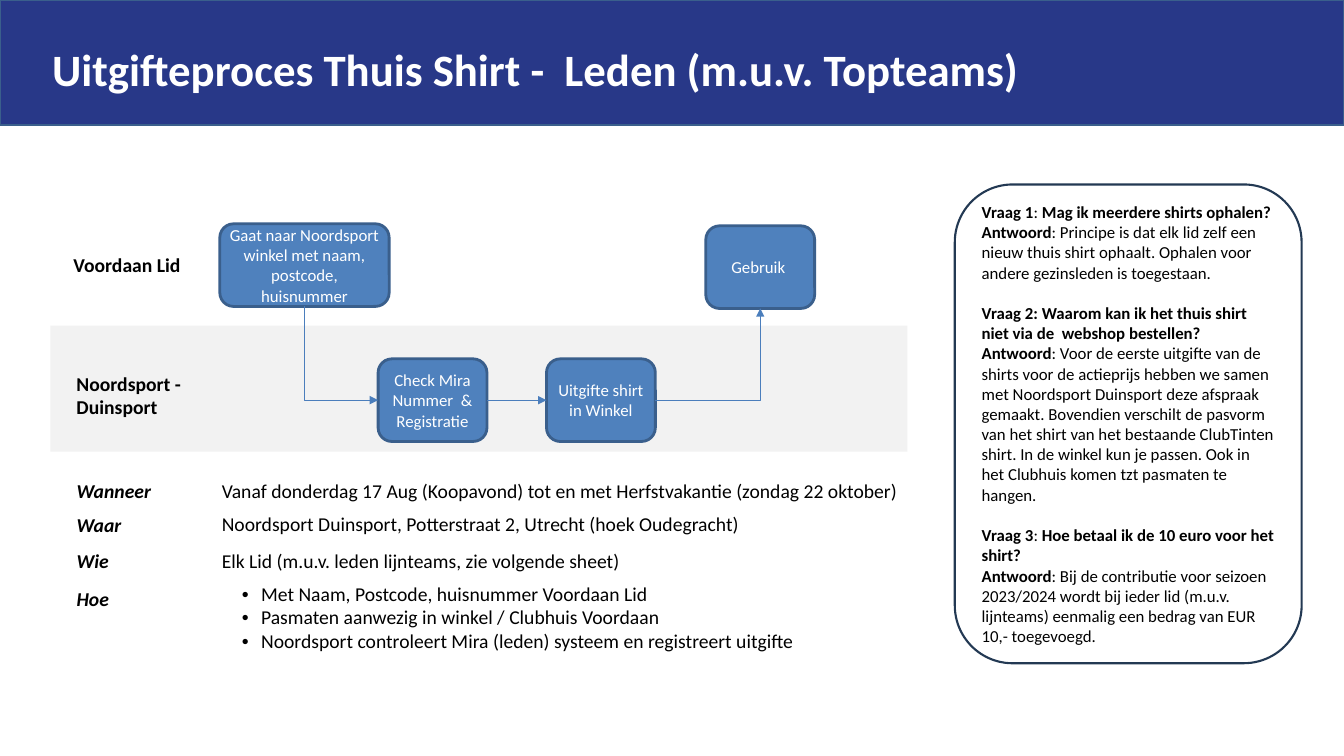
from dataclasses import dataclass

from lxml.etree import SubElement
from pptx import Presentation
from pptx.dml.color import RGBColor
from pptx.enum.shapes import MSO_CONNECTOR, MSO_SHAPE
from pptx.enum.text import MSO_ANCHOR, PP_ALIGN
from pptx.oxml.ns import qn
from pptx.util import Emu, Pt

EMU_PER_PX = 9144
FONT = "Calibri"
WHITE, BLACK = "FFFFFF", "000000"
NAVY, BAND_GREY = "283888", "F2F2F2"
STEP_BLUE, STEP_EDGE, ARROW_BLUE = "4F81BD", "3A5F8C", "4B7EBC"
PANEL_EDGE = "233953"
STEP_HEIGHT = 82
LOWER_ROW_TOP = 356


@dataclass(frozen=True)
class Box:
    left: int
    top: int
    width: int
    height: int

    def emu(self) -> tuple:
        return px(self.left), px(self.top), px(self.width), px(self.height)


@dataclass(frozen=True)
class Step:
    name: str
    text: str
    left: int
    top: int
    width: int = 108


@dataclass(frozen=True)
class Arrow:
    start: str
    start_side: int
    end: str
    end_side: int
    preset: str


STEPS = [
    Step("ophalen", "Gaat naar Noordsport winkel met naam, postcode, huisnummer",
         218, 222, 168),
    Step("check", "Check Mira Nummer  & Registratie", 375, LOWER_ROW_TOP),
    Step("gebruik", "Gebruik ", 700, 224),
    Step("uitgifte", "Uitgifte shirt in Winkel", 542, LOWER_ROW_TOP),
]
ARROWS = [
    Arrow("ophalen", 2, "check", 1, "bentConnector2"),
    Arrow("check", 3, "uitgifte", 1, "bentConnector3"),
    Arrow("uitgifte", 3, "gebruik", 2, "bentConnector2"),
]
LABELS = [
    ("Voordaan Lid", Box(63, 246, 130, 34)),
    ("Noordsport - Duinsport", Box(66, 364, 152, 57)),
]
# Each paragraph alternates between bold and regular runs.
QUESTIONS = [
    (["Vraag 1", ": ", "Mag ik meerdere shirts ophalen?"],
     ["Antwoord", ": Principe is dat elk lid zelf een nieuw thuis shirt ophaalt. "
      "Ophalen voor andere gezinsleden is toegestaan."]),
    (["Vraag 2: Waarom kan ik het thuis shirt niet via de  webshop bestellen?"],
     ["Antwoord", ": Voor de eerste uitgifte van de shirts voor de actieprijs hebben "
      "we samen met Noordsport Duinsport deze afspraak gemaakt. Bovendien verschilt "
      "de pasvorm van het shirt van het bestaande ClubTinten shirt. In de winkel kun "
      "je passen. Ook in het Clubhuis komen tzt pasmaten te hangen."]),
    (["Vraag 3", ": ", "Hoe betaal ik de 10 euro voor het shirt?"],
     ["Antwoord", ": Bij de contributie voor seizoen 2023/2024 wordt bij ieder lid "
      "(m.u.v. lijnteams) eenmalig een bedrag van EUR 10,- toegevoegd."]),
]
COLUMN_WIDTHS = [150, 524, 202]
ROW_HEIGHTS = [26, 26, 26, 78]
DETAILS = [
    ("Wanneer", ["Vanaf donderdag 17 Aug (Koopavond) tot en met Herfstvakantie "
                 "(zondag 22 oktober)"]),
    ("Waar", ["Noordsport Duinsport, Potterstraat 2, Utrecht (hoek Oudegracht)"]),
    ("Wie", ["Elk Lid (m.u.v. leden lijnteams, zie volgende sheet)"]),
    ("Hoe", ["Met Naam, Postcode, huisnummer Voordaan Lid",
             "Pasmaten aanwezig in winkel / Clubhuis Voordaan",
             "Noordsport controleert Mira (leden) systeem en registreert uitgifte"]),
]


def px(length: int) -> Emu:
    return Emu(length * EMU_PER_PX)


def color(value: str) -> RGBColor:
    return RGBColor.from_string(value)


def style_font(paragraph, size: int, font_color: str = BLACK, bold=None, italic=None) -> None:
    font = paragraph.font
    font.name, font.size, font.bold, font.italic = FONT, Pt(size), bold, italic
    font.color.rgb = color(font_color)


def add_box(slide, kind, box: Box, fill=None, edge=None, edge_width: float = 2):
    shape = slide.shapes.add_shape(kind, *box.emu())
    shape.shadow.inherit = False
    if fill:
        shape.fill.solid()
        shape.fill.fore_color.rgb = color(fill)
    else:
        shape.fill.background()
    if edge:
        shape.line.color.rgb = color(edge)
        shape.line.width = Pt(edge_width)
    else:
        shape.line.fill.background()
    return shape


def add_label(slide, text: str, box: Box, size: int, font_color: str, anchor) -> None:
    frame = slide.shapes.add_textbox(*box.emu()).text_frame
    frame.word_wrap = True
    frame.vertical_anchor = anchor
    frame.text = text
    style_font(frame.paragraphs[0], size, font_color, bold=True)


def add_step(slide, step: Step):
    box = Box(step.left, step.top, step.width, STEP_HEIGHT)
    shape = add_box(slide, MSO_SHAPE.ROUNDED_RECTANGLE, box, STEP_BLUE, STEP_EDGE)
    frame = shape.text_frame
    frame.margin_left = frame.margin_right = frame.margin_top = frame.margin_bottom = px(4)
    frame.text = step.text
    paragraph = frame.paragraphs[0]
    paragraph.alignment = PP_ALIGN.CENTER
    style_font(paragraph, 12, WHITE)
    return shape


def add_arrow(slide, arrow: Arrow, steps: dict) -> None:
    connector = slide.shapes.add_connector(MSO_CONNECTOR.ELBOW, 0, 0, 0, 0)
    connector.begin_connect(steps[arrow.start], arrow.start_side)
    connector.end_connect(steps[arrow.end], arrow.end_side)
    connector.line.color.rgb = color(ARROW_BLUE)
    connector.line.width = Pt(0.75)
    properties = connector._element.spPr
    properties.find(qn("a:prstGeom")).set("prst", arrow.preset)
    SubElement(connector.line._get_or_add_ln(), qn("a:tailEnd"), type="triangle")
    SubElement(properties, qn("a:effectLst"))
    if arrow.start_side == 2:
        turn_downward(connector)


def turn_downward(connector) -> None:
    """Make a two-part elbow run down first and then to the right."""
    width, height = connector.width, connector.height
    shift = (width - height) // 2
    connector.left, connector.top = connector.left + shift, connector.top - shift
    connector.width, connector.height = height, width
    transform = connector._element.spPr.find(qn("a:xfrm"))
    transform.set("rot", str(270 * 60000))
    transform.set("flipH", "1")


def add_questions(slide) -> None:
    panel = add_box(slide, MSO_SHAPE.ROUNDED_RECTANGLE, Box(947, 183, 344, 475),
                    edge=PANEL_EDGE, edge_width=1.5)
    frame = panel.text_frame
    for number, question in enumerate(QUESTIONS):
        for part, texts in enumerate(question):
            first = number == part == 0
            paragraph = frame.paragraphs[0] if first else frame.add_paragraph()
            paragraph.alignment = PP_ALIGN.LEFT
            if part == 0 and number > 0:
                paragraph.space_before = Pt(14.6)
            style_font(paragraph, 12)
            for index, text in enumerate(texts):
                run = paragraph.add_run()
                run.text = text
                run.font.bold = index % 2 == 0


def add_bullet(paragraph) -> None:
    paragraph.level = 1
    properties = paragraph._p.get_or_add_pPr()
    properties.set("marL", str(px(39)))
    properties.set("indent", str(px(-19)))
    SubElement(properties, qn("a:buFont"), typeface="Arial")
    SubElement(properties, qn("a:buChar"), char="•")


def add_details(slide) -> None:
    box = Box(66, 471, sum(COLUMN_WIDTHS), 178)
    graphic = slide.shapes.add_table(len(DETAILS), len(COLUMN_WIDTHS), *box.emu())
    table = graphic.table
    table.first_row = table.horz_banding = False
    for column, width in zip(table.columns, COLUMN_WIDTHS):
        column.width = px(width)
    for row, height in zip(table.rows, ROW_HEIGHTS):
        row.height = px(height)
        for cell in row.cells:
            cell.fill.background()
    graphic.height = px(box.height)
    for index, (heading, lines) in enumerate(DETAILS):
        label, content = table.cell(index, 0), table.cell(index, 1)
        bulleted = len(lines) > 1
        if heading != "Wie":
            content.merge(table.cell(index, 2))
        label.text, content.text = heading, "\n".join(lines)
        content.margin_left = content.margin_right = px(4)
        content.margin_top = content.margin_bottom = 0
        label.vertical_anchor = content.vertical_anchor = (
            MSO_ANCHOR.TOP if bulleted else MSO_ANCHOR.MIDDLE)
        style_font(label.text_frame.paragraphs[0], 14, bold=True, italic=True)
        for paragraph in content.text_frame.paragraphs:
            if bulleted:
                add_bullet(paragraph)
            style_font(paragraph, 14)


def main() -> None:
    presentation = Presentation()
    presentation.slide_width, presentation.slide_height = px(1333), px(750)
    slide = presentation.slides.add_slide(presentation.slide_layouts[6])
    add_box(slide, MSO_SHAPE.RECTANGLE, Box(0, 0, 1333, 124), NAVY, STEP_EDGE)
    add_box(slide, MSO_SHAPE.RECTANGLE, Box(50, 323, 850, 125), BAND_GREY)
    add_label(slide, "Uitgifteproces Thuis Shirt -  Leden (m.u.v. Topteams)",
              Box(42, 6, 1200, 125), 32, WHITE, MSO_ANCHOR.MIDDLE)
    for text, box in LABELS:
        add_label(slide, text, box, 14, BLACK, MSO_ANCHOR.TOP)
    steps = {step.name: add_step(slide, step) for step in STEPS}
    for arrow in ARROWS:
        add_arrow(slide, arrow, steps)
    add_questions(slide)
    add_details(slide)
    presentation.save("out.pptx")


if __name__ == "__main__":
    main()
